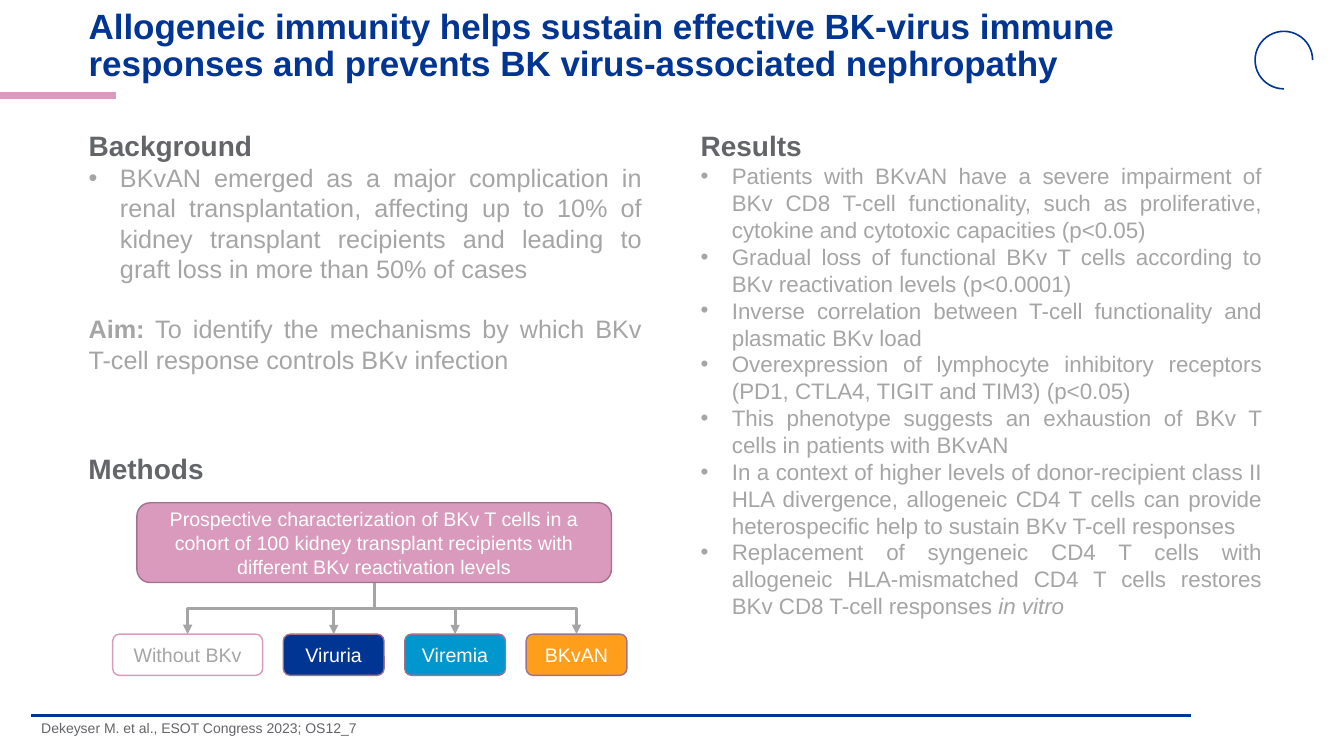
from lxml import etree
from pptx import Presentation
from pptx import util as u
from pptx.dml.color import RGBColor
from pptx.enum import shapes, text
from pptx.oxml import ns

NAVY, PINK, MAUVE, BLUE, ORANGE = "003594", "DA9ABD", "A1728C", "0097CE", "FF9E1B"
DARK, GREY, WHITE = "636569", "A5A5A5", "FFFFFF"
KIND = shapes.MSO_SHAPE
LINK = shapes.MSO_CONNECTOR
ALIGN = text.PP_ALIGN

TITLE = ("Allogeneic immunity helps sustain effective BK-virus immune responses "
         "and prevents BK virus-associated nephropathy")
BACKGROUND = ("BKvAN emerged as a major complication in renal transplantation, affecting "
              "up to 10% of kidney transplant recipients and leading to graft loss in more "
              "than 50% of cases")
AIM = "To identify the mechanisms by which BKv T-cell response controls BKv infection"
COHORT = ("Prospective characterization of BKv T cells in a cohort of 100 kidney transplant "
          "recipients with different BKv reactivation levels")
RESULTS = [
    "Patients with BKvAN have a severe impairment of BKv CD8 T-cell functionality, such as "
    "proliferative, cytokine and cytotoxic capacities (p<0.05)",
    "Gradual loss of functional BKv T cells according to BKv reactivation levels (p<0.0001)",
    "Inverse correlation between T-cell functionality and plasmatic BKv load",
    "Overexpression of lymphocyte inhibitory receptors (PD1, CTLA4, TIGIT and TIM3) (p<0.05)",
    "This phenotype suggests an exhaustion of BKv T cells in patients with BKvAN",
    "In a context of higher levels of donor-recipient class II HLA divergence, allogeneic CD4 "
    "T cells can provide heterospecific help to sustain BKv T-cell responses",
    "Replacement of syngeneic CD4 T cells with allogeneic HLA-mismatched CD4 T cells restores "
    "BKv CD8 T-cell responses ",
]
# Label, width in cm, fill, line colour, text colour
GROUPS = [
    ("Without BKv", 3.78, None, PINK, GREY),
    ("Viruria", 2.54, NAVY, MAUVE, WHITE),
    ("Viremia", 2.54, BLUE, MAUVE, WHITE),
    ("BKvAN", 2.54, ORANGE, MAUVE, WHITE),
]


def color(value):
    return RGBColor.from_string(value)


def cm(*values):
    return [u.Cm(value) for value in values]


def style(para, size, tint, bold=False, align=ALIGN.LEFT):
    para.alignment = align
    para.space_before = u.Pt(0)
    for span in para.runs:
        font = span.font
        font.name, font.size, font.bold = "Arial", u.Pt(size), bold
        font.color.rgb = color(tint)


def set_bullet(para, bullet):
    """Give the paragraph a hanging bullet, or none at all."""
    props = para._p.get_or_add_pPr()
    indent = u.Cm(0.79) if bullet else 0
    props.set("marL", str(indent))
    props.set("indent", str(-indent))
    if bullet:
        etree.SubElement(props, ns.qn("a:buFont")).set("typeface", "Arial")
        etree.SubElement(props, ns.qn("a:buChar")).set("char", "•")
    else:
        etree.SubElement(props, ns.qn("a:buNone"))


def place(holder, box):
    holder.left, holder.top, holder.width, holder.height = cm(*box)
    frame = holder.text_frame
    frame.word_wrap = True
    frame.auto_size = text.MSO_AUTO_SIZE.NONE
    return frame


def add_line(page, start, end, tint, width, kind=LINK.STRAIGHT, arrow=False):
    line = page.shapes.add_connector(kind, *cm(*start, *end))
    line.line.color.rgb = color(tint)
    line.line.width = u.Pt(width)
    if arrow:
        tail = etree.SubElement(line.line._get_or_add_ln(), ns.qn("a:tailEnd"))
        tail.set("type", "triangle")
    etree.SubElement(line._element.spPr, ns.qn("a:effectLst"))
    return line


def add_card(page, box, label, fill, outline, tint):
    card = page.shapes.add_shape(KIND.FLOWCHART_ALTERNATE_PROCESS, *cm(*box))
    card.shadow.inherit = False
    if fill:
        card.fill.solid()
        card.fill.fore_color.rgb = color(fill)
    else:
        card.fill.background()
    card.line.color.rgb = color(outline)
    card.line.width = u.Pt(1)
    frame = card.text_frame
    frame.word_wrap = True
    frame.vertical_anchor = text.MSO_ANCHOR.MIDDLE
    frame.text = label
    style(frame.paragraphs[0], 14, tint, align=ALIGN.CENTER)
    return card


def add_label(page, box, label, size, bold=False):
    frame = place(page.shapes.add_textbox(*cm(*box)), box)
    frame.text = label
    style(frame.paragraphs[0], size, DARK, bold)
    return frame.paragraphs[0]


def decorate(page, box):
    """Accent bar, footer rule and open ring."""
    left, top, width, height = box
    add_line(page, (left, top + 2.41), (left + 2.92, top + 2.41), PINK, 4.5)
    rule = top + height - 1.02
    add_line(page, (left + 0.79, rule), (left + 30.02, rule), NAVY, 1.5)
    ring = page.shapes.add_shape(KIND.ARC, *cm(left + width - 2.24, top + 0.79, 1.45, 1.45))
    ring.adjustments[0], ring.adjustments[1] = 54, 0  # from 90 to 0 degrees
    ring.shadow.inherit = False
    ring.fill.background()
    ring.line.color.rgb = color(NAVY)
    ring.line.width = u.Pt(1.13)


def add_title(page, box):
    frame = place(page.shapes.title, box)
    frame.vertical_anchor = text.MSO_ANCHOR.MIDDLE
    frame.text = TITLE
    style(frame.paragraphs[0], 25, NAVY, True)
    frame.paragraphs[0].line_spacing = 0.9


def add_column(holder, box, heading, bullets, size):
    """Heading followed by justified bullets."""
    frame = place(holder, box)
    frame.text = "\n".join([heading] + bullets)
    for index, para in enumerate(frame.paragraphs):
        set_bullet(para, index > 0)
        style(para, size if index else 20, GREY if index else DARK, index == 0, ALIGN.JUSTIFY)
    return frame


def add_background(holder, box):
    frame = add_column(holder, box, "Background", [BACKGROUND], 18)
    aim = frame.add_paragraph()
    set_bullet(aim, False)
    for part in ("Aim:", " " + AIM):
        aim.add_run().text = part
    style(aim, 18, GREY, align=ALIGN.JUSTIFY)
    aim.space_before = u.Pt(21.6)
    aim.runs[0].font.bold = True


def add_results(holder, box):
    last = add_column(holder, box, "Results", RESULTS, 16).paragraphs[-1]
    last.add_run().text = "in vitro"
    style(last, 16, GREY, align=ALIGN.JUSTIFY)
    last.runs[-1].font.italic = True


def add_methods(page, box):
    """Cohort card branching into the four patient groups."""
    left, top, width, height = box
    add_label(page, (left, top, 3.81, 1.12), "Methods", 20, True)
    cohort = add_card(page, (left + 1.47, top + 1.42, 11.96, 2.01), COHORT, PINK, MAUVE, WHITE)
    middle, rail = left + 7.45, top + 4.09
    trunk = add_line(page, (middle, top + 3.43), (middle, rail), GREY, 2.25)
    trunk.begin_connect(cohort, 2)

    card_left, card_top, gap = left + 0.86, top + 4.73, 0.52
    for index, (label, card_width, *colors) in enumerate(GROUPS):
        card = add_card(page, (card_left, card_top, card_width, 1.04), label, *colors)
        center = card_left + card_width / 2
        if index in (0, len(GROUPS) - 1):
            elbow = add_line(page, (middle, rail), (center, card_top), GREY, 2.25,
                             LINK.ELBOW, True)
            guides = elbow._element.spPr.find(ns.qn("a:prstGeom")).get_or_add_avLst()
            guide = etree.SubElement(guides, ns.qn("a:gd"))
            guide.set("name", "adj1")
            guide.set("fmla", "val 100000")
        else:
            drop = add_line(page, (center, rail), (center, card_top), GREY, 2.25, arrow=True)
            drop.end_connect(card, 0)
        card_left += card_width + gap


def main():
    deck = Presentation()
    deck.slide_width, deck.slide_height = cm(33.87, 19.05)
    page = deck.slides.add_slide(deck.slide_layouts[3])
    decorate(page, (0, 0, 33.87, 19.05))
    add_title(page, (1.98, 0.25, 29.21, 1.85))
    add_background(page.placeholders[1], (1.98, 3.12, 14.45, 6.5))
    add_results(page.placeholders[2], (17.4, 3.12, 14.66, 12.75))
    add_methods(page, (1.98, 11.25, 14.45, 5.77))
    source = add_label(page, (0.79, 18.06, 19.91, 0.86),
                       "Dekeyser M. et al., ESOT Congress 2023; OS12_7", 10)
    source.line_spacing = 0.9
    deck.save("out.pptx")


if __name__ == "__main__":
    main()
